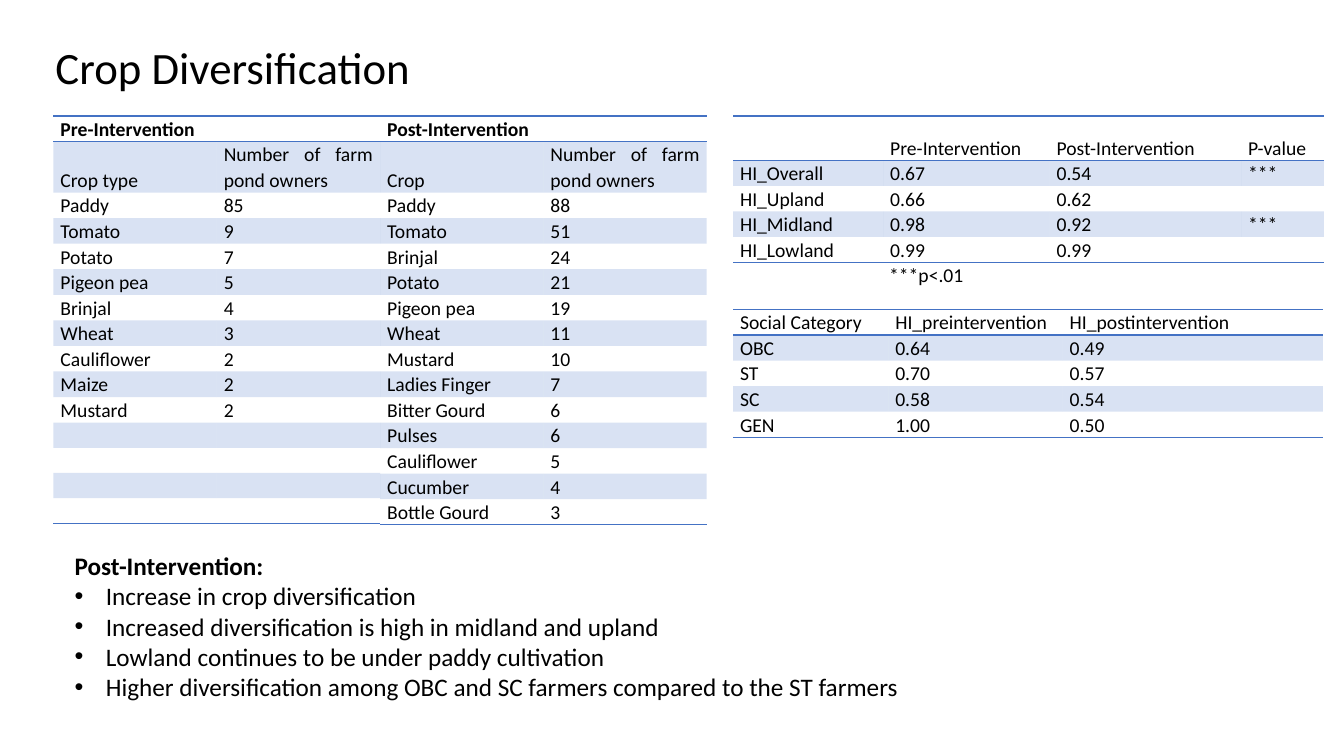
from lxml import etree
from pptx import Presentation
from pptx.dml.color import RGBColor
from pptx.enum.text import MSO_ANCHOR, MSO_AUTO_SIZE, PP_ALIGN
from pptx.oxml.ns import qn
from pptx.util import Inches, Pt

TOP, MIDDLE, BOTTOM = MSO_ANCHOR.TOP, MSO_ANCHOR.MIDDLE, MSO_ANCHOR.BOTTOM
LEFT, JUSTIFY = PP_ALIGN.LEFT, PP_ALIGN.JUSTIFY
NO_AUTOFIT = MSO_AUTO_SIZE.NONE
FONT, BLACK, BLUE = "Calibri", "000000", "4472C4"
NO_STYLE = "{2D5ABB26-0587-4C30-8999-92F81FD0307C}"
ROW = 0.25

PRE_CROPS = [
    ["Pre-Intervention", ""], ["Crop type", "Number of farm pond owners"],
    ["Paddy", "85"], ["Tomato", "9"], ["Potato", "7"], ["Pigeon pea", "5"],
    ["Brinjal", "4"], ["Wheat", "3"], ["Cauliflower", "2"], ["Maize", "2"],
    ["Mustard", "2"], ["", ""], ["", ""], ["", ""], ["", ""],
]
POST_CROPS = [
    ["Post-Intervention", ""], ["Crop", "Number of farm pond owners"],
    ["Paddy", "88"], ["Tomato", "51"], ["Brinjal", "24"], ["Potato", "21"],
    ["Pigeon pea", "19"], ["Wheat", "11"], ["Mustard", "10"],
    ["Ladies Finger", "7"], ["Bitter Gourd", "6"], ["Pulses", "6"],
    ["Cauliflower", "5"], ["Cucumber", "4"], ["Bottle Gourd", "3"],
]
LAND_INDEX = [
    ["", "Pre-Intervention", "Post-Intervention", "P-value"],
    ["HI_Overall", "0.67", "0.54", "***"],
    ["HI_Upland", "0.66", "0.62", ""],
    ["HI_Midland", "0.98", "0.92", "***"],
    ["HI_Lowland", "0.99", "0.99", ""],
]
SOCIAL_INDEX = [
    ["Social Category", "HI_preintervention", "HI_postintervention"],
    ["OBC", "0.64", "0.49"], ["ST", "0.70", "0.57"],
    ["SC", "0.58", "0.54"], ["GEN", "1.00", "0.50"],
]
FINDINGS = [
    "Post-Intervention:",
    "Increase in crop diversification",
    "Increased diversification is high in midland and upland",
    "Lowland continues to be under paddy cultivation",
    "Higher diversification among OBC and SC farmers compared to the ST farmers",
]


def color(value):
    return RGBColor.from_string(value)


def format_runs(paragraph, size, bold=False):
    for run in paragraph.runs:
        run.font.name = FONT
        run.font.size = Pt(size)
        run.font.bold = bold
        run.font.color.rgb = color(BLACK)


def place(part, box):
    part.left, part.top, part.width, part.height = map(Inches, box)


def set_frame(frame, anchor):
    frame.word_wrap = True
    frame.auto_size = NO_AUTOFIT
    frame.vertical_anchor = anchor


def add_title(slide, box):
    title = slide.shapes.title
    place(title, box)
    set_frame(title.text_frame, MIDDLE)
    title.text_frame.text = "Crop Diversification"
    heading = title.text_frame.paragraphs[0]
    heading.alignment = LEFT
    format_runs(heading, 32)


def add_findings(slide, box):
    body = slide.placeholders[1]
    place(body, box)
    frame = body.text_frame
    set_frame(frame, TOP)
    frame.text = "\n".join(FINDINGS)
    for index, finding in enumerate(frame.paragraphs):
        finding.space_before = finding.space_after = Pt(0)
        finding.line_spacing = 1.0
        format_runs(finding, 18, index == 0)
        properties = finding._p.get_or_add_pPr()
        indent = Inches(0.31) if index else 0
        properties.set("marL", str(indent))
        properties.set("indent", str(-indent))
        if index:
            etree.SubElement(properties, qn("a:buFont"), typeface="Arial")
            etree.SubElement(properties, qn("a:buChar"), char="•")
        else:
            etree.SubElement(properties, qn("a:buNone"))


def add_border(cell, side):
    line = etree.SubElement(cell._tc.get_or_add_tcPr(), qn(f"a:{side}"), w=str(Pt(1)))
    fill = etree.SubElement(line, qn("a:solidFill"))
    etree.SubElement(fill, qn("a:srgbClr"), val=BLUE)


def fill_band(cell):
    cell.fill.solid()
    cell.fill.fore_color.rgb = color(BLUE)
    tint = cell._tc.tcPr.find(f".//{qn('a:solidFill')}/{qn('a:srgbClr')}")
    etree.SubElement(tint, qn("a:alpha"), val="20000")


def format_cell(cell, text, bold, anchor):
    cell.margin_left = cell.margin_right = Inches(0.07)
    cell.margin_top = cell.margin_bottom = 0
    cell.vertical_anchor = anchor
    cell.text_frame.text = text
    entry = cell.text_frame.paragraphs[0]
    entry.alignment = JUSTIFY
    entry.line_spacing = 1.07
    format_runs(entry, 14, bold)
    if not text:
        etree.SubElement(entry._p, qn("a:endParaRPr"), sz="1400")


def add_grid(slide, left, top, rows, widths, tall_rows, spanning_header=False):
    heights = [tall_rows.get(index, ROW) for index in range(len(rows))]
    frame = slide.shapes.add_table(
        len(rows), len(widths), Inches(left), Inches(top),
        Inches(sum(widths)), Inches(sum(heights)))
    table = frame.table
    table.first_row = table.horz_banding = False
    table._tbl.tblPr.find(qn("a:tableStyleId")).text = NO_STYLE
    for column, width in zip(table.columns, widths):
        column.width = Inches(width)
    for row, height in zip(table.rows, heights):
        row.height = Inches(height)
    last = len(rows) - 1
    for r, entries in enumerate(rows):
        for c, text in enumerate(entries):
            cell = table.cell(r, c)
            header = spanning_header and r == 0
            format_cell(cell, text, header, TOP if header else BOTTOM)
            if r == 0:
                add_border(cell, "lnT")
            if r in (0, last):
                add_border(cell, "lnB")
            if r % 2:
                fill_band(cell)
            else:
                cell.fill.background()
    if spanning_header:
        table.cell(0, 0).merge(table.cell(0, len(widths) - 1))


def add_crop_tables(slide, left, top):
    widths = [1.62, 1.62]
    for index, crops in enumerate([PRE_CROPS, POST_CROPS]):
        add_grid(slide, left + index * 3.24, top, crops, widths, {1: 2 * ROW}, True)


def add_index_tables(slide, left, top):
    add_grid(slide, left, top, LAND_INDEX, [1.49, 1.65, 1.9, 0.82], {0: 0.44})
    add_grid(slide, left, top + 1.92, SOCIAL_INDEX, [1.54, 1.73, 2.58], {})
    significance = slide.shapes.add_textbox(
        Inches(left + 1.45), Inches(top + 1.41), Inches(1.55), Inches(0.34))
    set_frame(significance.text_frame, TOP)
    significance.text_frame.text = "***p<.01"
    format_runs(significance.text_frame.paragraphs[0], 14)


def main():
    deck = Presentation()
    deck.slide_width, deck.slide_height = Inches(13.33), Inches(7.5)
    slide = deck.slides.add_slide(deck.slide_layouts[1])
    add_title(slide, (0.45, 0.34, 12.14, 0.64))
    add_findings(slide, (0.64, 5.41, 8.76, 1.92))
    add_crop_tables(slide, 0.53, 1.15)
    add_index_tables(slide, 7.27, 1.15)
    deck.save("out.pptx")


if __name__ == "__main__":
    main()
